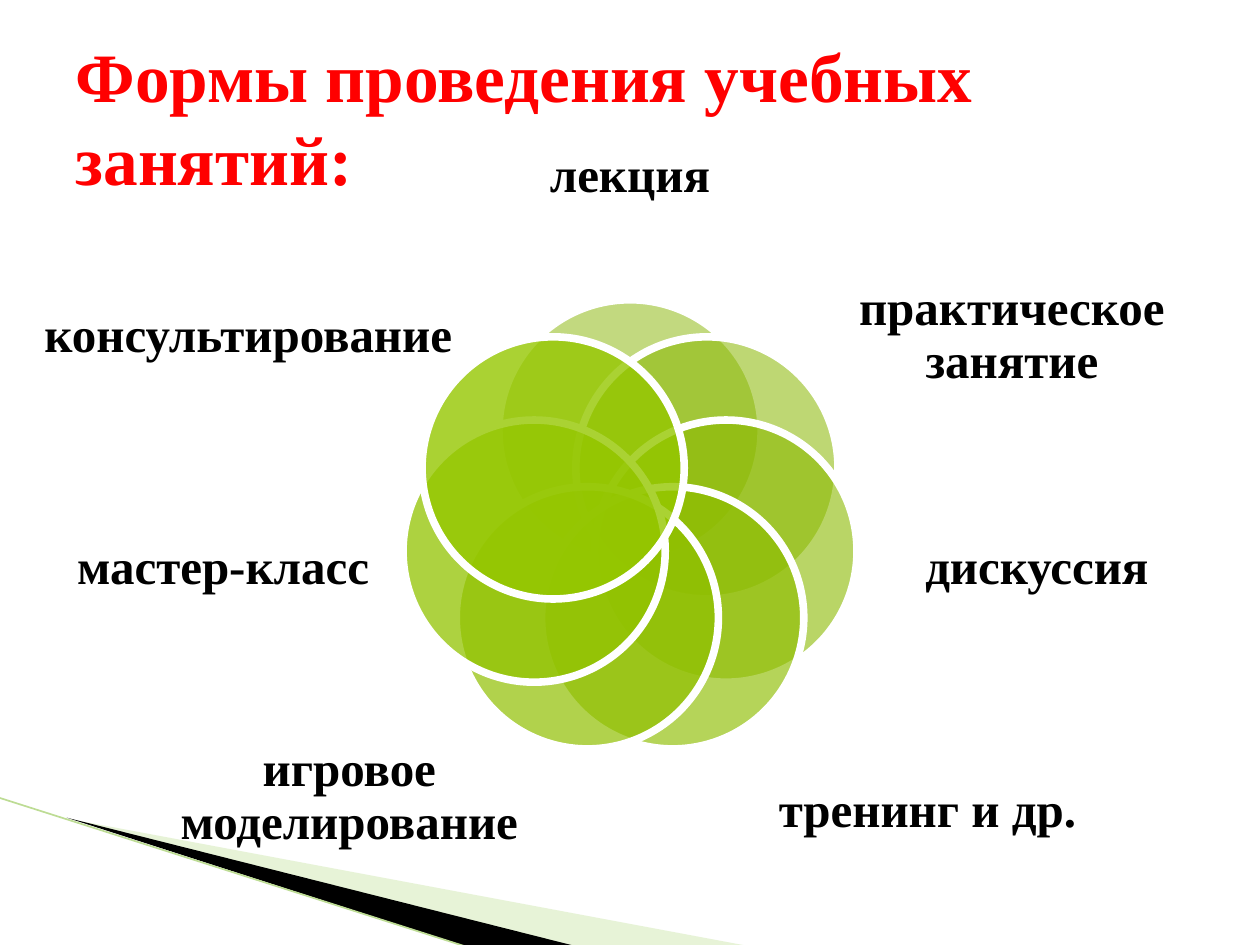
"""Build a slide with a seven-petal diagram of the forms of training sessions."""
import math
from typing import NamedTuple

import pptx
import pptx.dml.color
import pptx.enum.shapes
import pptx.enum.text
import pptx.oxml
import pptx.util
from lxml import etree

Pt = pptx.util.Pt
FONT = "Times New Roman"
DRAWING_NS = "http://schemas.openxmlformats.org/drawingml/2006/main"
FLOWER_X, FLOWER_Y, RING_RADIUS, PETAL_SIZE = 360, 302.4, 56.2, 149.8


class Form(NamedTuple):
    label: str
    left: float
    top: float
    width: float
    height: float
    color: str


class Wedge(NamedTuple):
    points: list[tuple[float, float]]
    color: str
    opacity: int


FORMS = [
    Form("лекция", 231, 54.7, 258, 92.2, "86B400"),
    Form("практическое занятие", 456.5, 141.8, 243.4, 100.8, "89B700"),
    Form("дискуссия", 473, 270.7, 239, 108, "8BBA00"),
    Form("тренинг и др.", 401, 414.7, 258, 98.6, "8EBD00"),
    Form("игровое моделирование", 70.6, 406.1, 258, 98.6, "90C000"),
    Form("мастер-класс", 8, 270.7, 239, 108, "92C300"),
    Form("консультирование", 20.1, 141.8, 243.4, 100.8, "95C700"),
]

WEDGES = [
    Wedge([(39.6, 468), (428.4, 540.7), (328.3, 540.7)], "C3E19D", 40),
    Wedge([(38.2, 467.3), (329, 540.7), (267.8, 541.4)], "000000", 100),
]


def rgb(value: str) -> pptx.dml.color.RGBColor:
    return pptx.dml.color.RGBColor.from_string(value)


def fill_shape(shape, color: str, opacity: int) -> None:
    shape.shadow.inherit = False
    shape.fill.solid()
    shape.fill.fore_color.rgb = rgb(color)
    if opacity < 100:
        tint = shape.fill._xPr.find(f".//{{{DRAWING_NS}}}srgbClr")
        etree.SubElement(tint, f"{{{DRAWING_NS}}}alpha", val=str(opacity * 1000))


def format_font(paragraph, size: float, color: str) -> None:
    paragraph.font.name = FONT
    paragraph.font.size = Pt(size)
    paragraph.font.bold = True
    paragraph.font.color.rgb = rgb(color)


def draw_wedge(shapes, wedge: Wedge) -> None:
    corners = [(Pt(x), Pt(y)) for x, y in wedge.points]
    builder = shapes.build_freeform(*corners[0])
    builder.add_line_segments(corners[1:], close=True)
    outline = builder.convert_to_shape()
    fill_shape(outline, wedge.color, wedge.opacity)
    outline.line.fill.background()


def draw_edge(shapes) -> None:
    edge = shapes.add_connector(
        pptx.enum.shapes.MSO_CONNECTOR.STRAIGHT, Pt(-0.7), Pt(455.8), Pt(267.8), Pt(541.4)
    )
    edge.line.color.rgb = rgb("BDDC94")
    edge.line.width = Pt(0.95)
    etree.SubElement(edge._element.spPr, f"{{{DRAWING_NS}}}effectLst")


def draw_petal(shapes, index: int, form: Form) -> None:
    angle = 2 * math.pi * index / len(FORMS)
    left = FLOWER_X + RING_RADIUS * math.sin(angle) - PETAL_SIZE / 2
    top = FLOWER_Y - RING_RADIUS * math.cos(angle) - PETAL_SIZE / 2
    petal = shapes.add_shape(
        pptx.enum.shapes.MSO_SHAPE.OVAL, Pt(left), Pt(top), Pt(PETAL_SIZE), Pt(PETAL_SIZE)
    )
    fill_shape(petal, form.color, 50 + 5 * index)
    petal.line.color.rgb = rgb("FFFFFF")
    petal.line.width = Pt(4.33)


def draw_label(shapes, form: Form) -> None:
    label = shapes.add_textbox(Pt(form.left), Pt(form.top), Pt(form.width), Pt(form.height))
    frame = label.text_frame
    frame.word_wrap = True
    frame.vertical_anchor = pptx.enum.text.MSO_ANCHOR.MIDDLE
    frame.margin_left = frame.margin_right = frame.margin_top = frame.margin_bottom = 0
    paragraph = frame.paragraphs[0]
    paragraph.text = form.label
    paragraph.alignment = pptx.enum.text.PP_ALIGN.CENTER
    paragraph.line_spacing = 0.9
    format_font(paragraph, 28, "000000")


def place_title(shapes) -> None:
    title = shapes.title
    title.left, title.top, title.width, title.height = Pt(36), Pt(21.6), Pt(648), Pt(90)
    frame = title.text_frame
    frame.text = "Формы проведения учебных занятий:"
    frame.word_wrap = True
    frame.auto_size = pptx.enum.text.MSO_AUTO_SIZE.NONE
    frame.vertical_anchor = pptx.enum.text.MSO_ANCHOR.MIDDLE
    frame.paragraphs[0].alignment = pptx.enum.text.PP_ALIGN.LEFT
    format_font(frame.paragraphs[0], 39.6, "FF0000")
    shapes._spTree.append(title._element)


def main() -> None:
    presentation = pptx.Presentation()
    presentation.slide_width, presentation.slide_height = Pt(720), Pt(540)
    shapes = presentation.slides.add_slide(presentation.slide_layouts[5]).shapes
    for wedge in WEDGES:
        draw_wedge(shapes, wedge)
    draw_edge(shapes)
    for index, form in enumerate(FORMS):
        draw_petal(shapes, index, form)
        draw_label(shapes, form)
    place_title(shapes)
    presentation.save("out.pptx")


if __name__ == "__main__":
    main()
